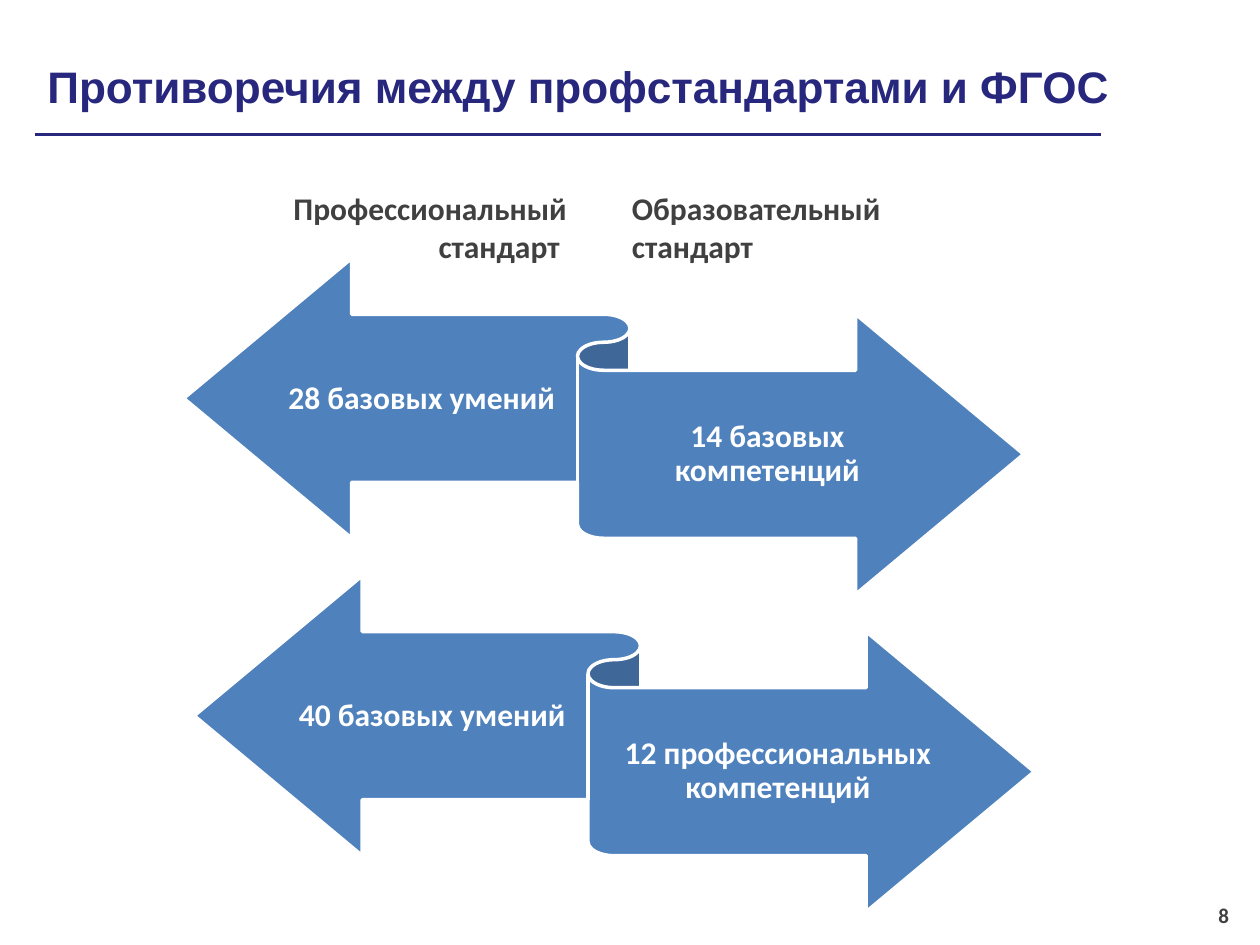
from dataclasses import dataclass

from lxml import etree
from pptx import Presentation
from pptx.dml.color import RGBColor
from pptx.enum.shapes import MSO_CONNECTOR, MSO_SHAPE
from pptx.enum.text import MSO_ANCHOR, PP_ALIGN
from pptx.oxml.ns import qn
from pptx.util import Pt

STRAIGHT = MSO_CONNECTOR.STRAIGHT
RIBBON = MSO_SHAPE.LEFT_RIGHT_RIBBON
TOP, MIDDLE = MSO_ANCHOR.TOP, MSO_ANCHOR.MIDDLE
LEFT, CENTER, RIGHT = PP_ALIGN.LEFT, PP_ALIGN.CENTER, PP_ALIGN.RIGHT


@dataclass(frozen=True)
class Theme:
    navy: RGBColor = RGBColor(0x27, 0x27, 0x7E)
    gray: RGBColor = RGBColor(0x40, 0x40, 0x40)
    blue: RGBColor = RGBColor(0x4F, 0x81, 0xBD)
    white: RGBColor = RGBColor(0xFF, 0xFF, 0xFF)
    title_font: str = "Arial"
    body_font: str = "Calibri"
    title_size: float = 25.2
    body_size: float = 18
    number_size: float = 12


class SlideBuilder:
    def __init__(self, slide, theme):
        self.slide = slide
        self.theme = theme

    def text(self, words, left, top, width, height, align=LEFT, anchor=TOP,
             color=None, size=None, font=None, side_inset=7.2, spacing=None):
        box = self.slide.shapes.add_textbox(Pt(left), Pt(top), Pt(width), Pt(height))
        frame = box.text_frame
        frame.word_wrap = True
        frame.vertical_anchor = anchor
        frame.margin_left = frame.margin_right = Pt(side_inset)
        para = frame.paragraphs[0]
        para.text = words
        para.alignment = align
        if spacing:
            para.line_spacing = spacing
        para.font.name = font or self.theme.body_font
        para.font.size = Pt(size or self.theme.body_size)
        para.font.bold = True
        para.font.color.rgb = color or self.theme.gray

    def rule(self, left, right, y):
        line = self.slide.shapes.add_connector(STRAIGHT, Pt(left), Pt(y), Pt(right), Pt(y))
        line.line.color.rgb = self.theme.navy
        line.line.width = Pt(1.5)
        etree.SubElement(line._element.spPr, qn("a:effectLst"))

    def ribbon(self, left, top, left_words, right_words):
        shape = self.slide.shapes.add_shape(RIBBON, Pt(left), Pt(top), Pt(480), Pt(192))
        shape.shadow.inherit = False
        shape.fill.solid()
        shape.fill.fore_color.rgb = self.theme.blue
        shape.line.color.rgb = self.theme.white
        shape.line.width = Pt(2)
        # Each half carries its own label
        for words, shift, drop, width in ((left_words, 50, 33.6, 172),
                                          (right_words, 240, 65, 187)):
            self.text(words, left + shift, top + drop, width, 94, CENTER, MIDDLE,
                      self.theme.white, side_inset=0, spacing=0.9)


def main():
    deck = Presentation()
    deck.slide_width, deck.slide_height = Pt(720), Pt(540)
    theme = Theme()
    page = SlideBuilder(deck.slides.add_slide(deck.slide_layouts[6]), theme)

    # Heading
    page.rule(20, 629, 77)
    page.text("Противоречия между профстандартами и ФГОС", 20, 21.6, 629, 55.4,
              anchor=MIDDLE, color=theme.navy, size=theme.title_size,
              font=theme.title_font)

    # Opposing ribbons
    page.ribbon(105, 147.6, "28 базовых умений", "14 базовых компетенций")
    page.ribbon(111, 329, "40 базовых умений", "12 профессиональных компетенций")

    # Column labels
    page.text("Профессиональный стандарт ", 116, 104.4, 215, 51, RIGHT)
    page.text("Образовательный стандарт", 354, 104.4, 215, 51)

    # Page number
    page.text("8", 541.4, 508.3, 168, 29, RIGHT, MIDDLE, size=theme.number_size)

    deck.save("out.pptx")


if __name__ == "__main__":
    main()
